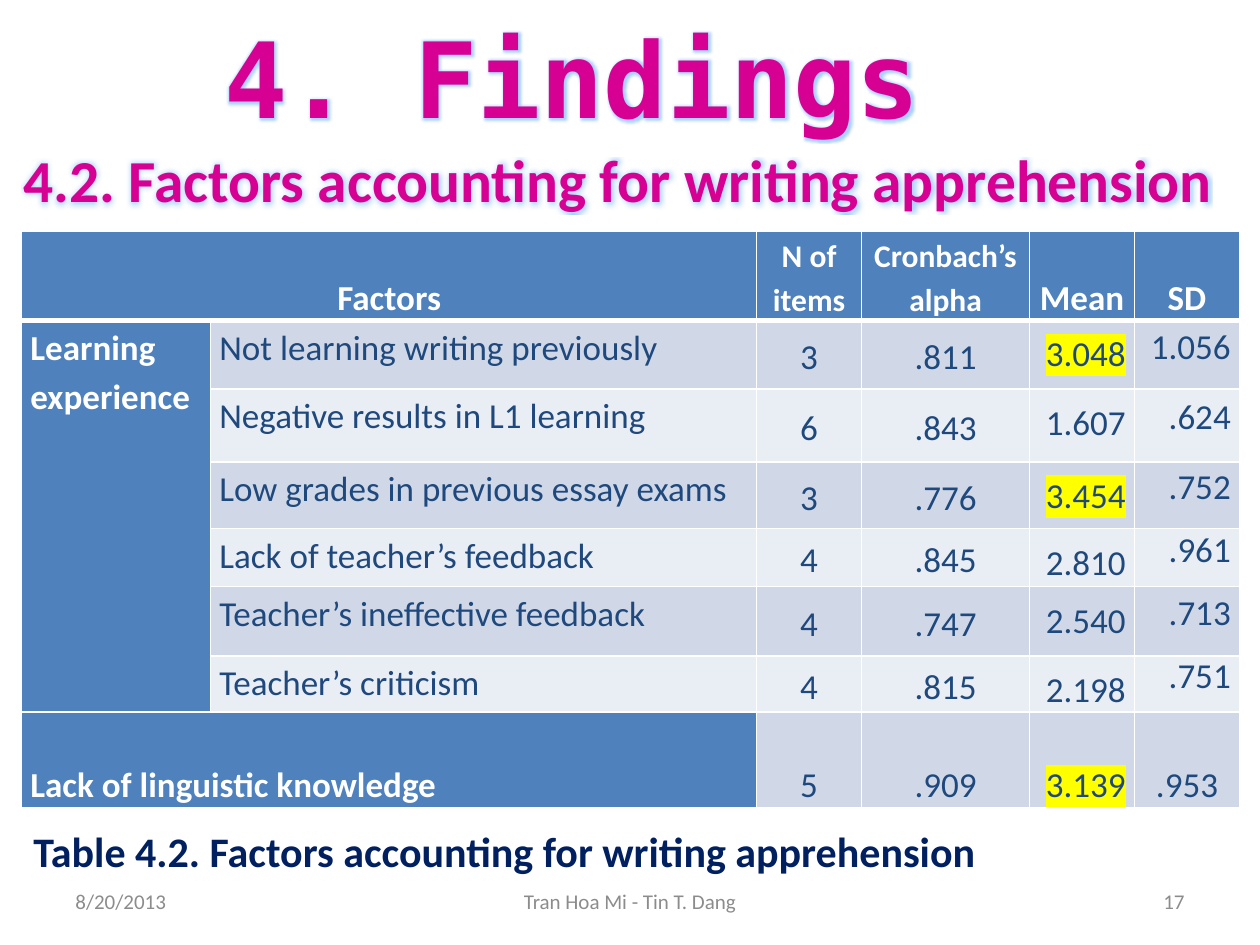
from lxml import etree
from pptx import Presentation
from pptx.dml.color import RGBColor
from pptx.enum.text import MSO_ANCHOR, MSO_AUTO_SIZE, PP_ALIGN
from pptx.oxml.ns import qn
from pptx.util import Pt

LEFT, CENTER, RIGHT = PP_ALIGN.LEFT, PP_ALIGN.CENTER, PP_ALIGN.RIGHT
TOP, MIDDLE, BOTTOM = MSO_ANCHOR.TOP, MSO_ANCHOR.MIDDLE, MSO_ANCHOR.BOTTOM
NO_AUTOFIT = MSO_AUTO_SIZE.NONE

COLORS = {
    "heading": "D60093", "outline": "467AB8", "glow": "0873F5",
    "caption": "002060", "footer": "8C8C8C", "white": "FFFFFF",
    "header": "4F81BD", "odd": "D0D8E8", "even": "E9EDF4",
    "text": "1F497D", "mark": "FFFF00",
}
FONT = "Calibri"
TITLE_FONT = "DejaVu Sans Mono"
COL_WIDTHS = [108, 312, 60, 96, 60, 60]
ROW_HEIGHTS = [51, 39.2, 41.8, 38.2, 33.1, 39.6, 32, 54.5]
HEADERS = ["Factors", None, "N of\nitems", "Cronbach’s alpha", "Mean", "SD"]
FACTORS = [
    ("Not learning writing previously", "3", ".811", "3.048", "1.056"),
    ("Negative results in L1 learning", "6", ".843", "1.607", ".624"),
    ("Low grades in previous essay exams", "3", ".776", "3.454", ".752"),
    ("Lack of teacher’s feedback", "4", ".845", "2.810", ".961"),
    ("Teacher’s ineffective feedback", "4", ".747", "2.540", ".713"),
    ("Teacher’s criticism", "4", ".815", "2.198", ".751"),
]
LINGUISTIC = ("5", ".909", "3.139", ".953")
HIGH_MEANS = {"3.048", "3.454", "3.139"}


def rgb(name):
    return RGBColor.from_string(COLORS[name])


def add_color(parent, name, alpha=None):
    clr = etree.SubElement(parent, qn("a:srgbClr"), val=COLORS[name])
    if alpha:
        etree.SubElement(clr, qn("a:alpha"), val=str(alpha))


def write(tf, text, size, color, align=LEFT, bold=False, font=FONT, spacing=None):
    tf.text = text
    for p in tf.paragraphs:
        p.alignment = align
        if spacing:
            p.line_spacing = spacing
        for r in p.runs:
            r.font.size = Pt(size)
            r.font.bold = bold
            r.font.name = font
            r.font.color.rgb = rgb(color)


def place(sp, left, top, width, height, anchor=TOP):
    sp.left, sp.top, sp.width, sp.height = Pt(left), Pt(top), Pt(width), Pt(height)
    tf = sp.text_frame
    tf.word_wrap = True
    tf.auto_size = NO_AUTOFIT
    tf.vertical_anchor = anchor
    return tf


def add_text(s, box, text, size, color, align=LEFT, bold=False, anchor=TOP):
    sp = s.shapes.add_textbox(0, 0, 0, 0)
    write(place(sp, *box, anchor), text, size, color, align, bold)
    return sp


def add_glow(sp):
    for r in sp.text_frame.paragraphs[0].runs:
        rPr = r.font._element
        ln = etree.Element(qn("a:ln"), w=str(Pt(0.83)))
        add_color(etree.SubElement(ln, qn("a:solidFill")), "outline")
        rPr.insert(0, ln)
        effects = etree.Element(qn("a:effectLst"))
        glow = etree.SubElement(effects, qn("a:glow"), rad=str(Pt(3.6)))
        add_color(glow, "glow", 35000)
        rPr.find(qn("a:latin")).addprevious(effects)


def highlight(cell):
    rPr = cell.text_frame.paragraphs[0].runs[0].font._element
    mark = etree.Element(qn("a:highlight"))
    add_color(mark, "mark")
    rPr.find(qn("a:latin")).addprevious(mark)


def style_cell(cell, fill, bottom=1):
    cell.margin_left = cell.margin_right = Pt(5)
    cell.margin_top = cell.margin_bottom = 0
    tcPr = cell._tc.get_or_add_tcPr()
    for side, width in (("L", 1), ("R", 1), ("T", 1), ("B", bottom)):
        ln = etree.SubElement(tcPr, qn(f"a:ln{side}"), w=str(Pt(width)))
        add_color(etree.SubElement(ln, qn("a:solidFill")), "white")
    cell.fill.solid()
    cell.fill.fore_color.rgb = rgb(fill)


def fill_cell(cell, text, align, anchor, color="text", size=20, spacing=1.15):
    write(cell.text_frame, text, size, color, align, color == "white", spacing=spacing)
    cell.vertical_anchor = anchor
    if text in HIGH_MEANS:
        highlight(cell)


def add_factor_table(s):
    frame = s.shapes.add_table(len(ROW_HEIGHTS), len(COL_WIDTHS), Pt(12.4), Pt(132),
                               Pt(sum(COL_WIDTHS)), Pt(sum(ROW_HEIGHTS)))
    table = frame.table
    for col, width in zip(table.columns, COL_WIDTHS):
        col.width = Pt(width)
    for row, height in zip(table.rows, ROW_HEIGHTS):
        row.height = Pt(height)
    last = len(ROW_HEIGHTS) - 1
    for i in range(last + 1):
        for j in range(len(COL_WIDTHS)):
            is_header = i == 0 or j == 0 or (i == last and j == 1)
            band = "odd" if i % 2 else "even"
            style_cell(table.cell(i, j), "header" if is_header else band, 1 if i else 3)
    table.cell(0, 0).merge(table.cell(0, 1))
    table.cell(1, 0).merge(table.cell(last - 1, 0))
    table.cell(last, 0).merge(table.cell(last, 1))

    for j, text in enumerate(HEADERS):
        if text:
            two_lines = j in (2, 3)
            fill_cell(table.cell(0, j), text, CENTER, MIDDLE if two_lines else BOTTOM,
                      "white", 18 if two_lines else 20)
    fill_cell(table.cell(1, 0), "Learning experience", LEFT, TOP, "white")
    for i, (factor, items, alpha, mean, sd) in enumerate(FACTORS, 1):
        fill_cell(table.cell(i, 1), factor, LEFT, TOP)
        fill_cell(table.cell(i, 2), items, CENTER, MIDDLE)
        fill_cell(table.cell(i, 3), alpha, CENTER, MIDDLE)
        fill_cell(table.cell(i, 4), mean, RIGHT, TOP, spacing=Pt(16))
        table.cell(i, 4).margin_top = Pt(16)
        fill_cell(table.cell(i, 5), sd, RIGHT, MIDDLE, spacing=Pt(16))
    fill_cell(table.cell(last, 0), "Lack of linguistic knowledge", LEFT, BOTTOM, "white")
    for j, text in enumerate(LINGUISTIC, 2):
        fill_cell(table.cell(last, j), text, RIGHT if j == 4 else CENTER, BOTTOM)


def main():
    prs = Presentation()
    prs.slide_width, prs.slide_height = Pt(720), Pt(540)
    s = prs.slides.add_slide(prs.slide_layouts[5])
    title = s.shapes.title
    write(place(title, 42, 4, 570, 80), "4. Findings", 60, "heading", CENTER, True, TITLE_FONT)
    add_glow(title)
    heading = "Factors accounting for writing apprehension"
    subtitle = add_text(s, (2, 78, 702, 48), f"4.2. {heading}", 34, "heading", CENTER, True)
    add_glow(subtitle)
    add_factor_table(s)
    add_text(s, (12, 468, 624, 36), f"Table 4.2. {heading}", 24, "caption", bold=True)
    for left, width, text, align in (
        (36, 168, "8/20/2013", LEFT),
        (246, 228, "Tran Hoa Mi - Tin T. Dang", CENTER),
        (516, 168, "17", RIGHT),
    ):
        add_text(s, (left, 500.5, width, 28.75), text, 12, "footer", align, anchor=MIDDLE)
    prs.save("out.pptx")


if __name__ == "__main__":
    main()
